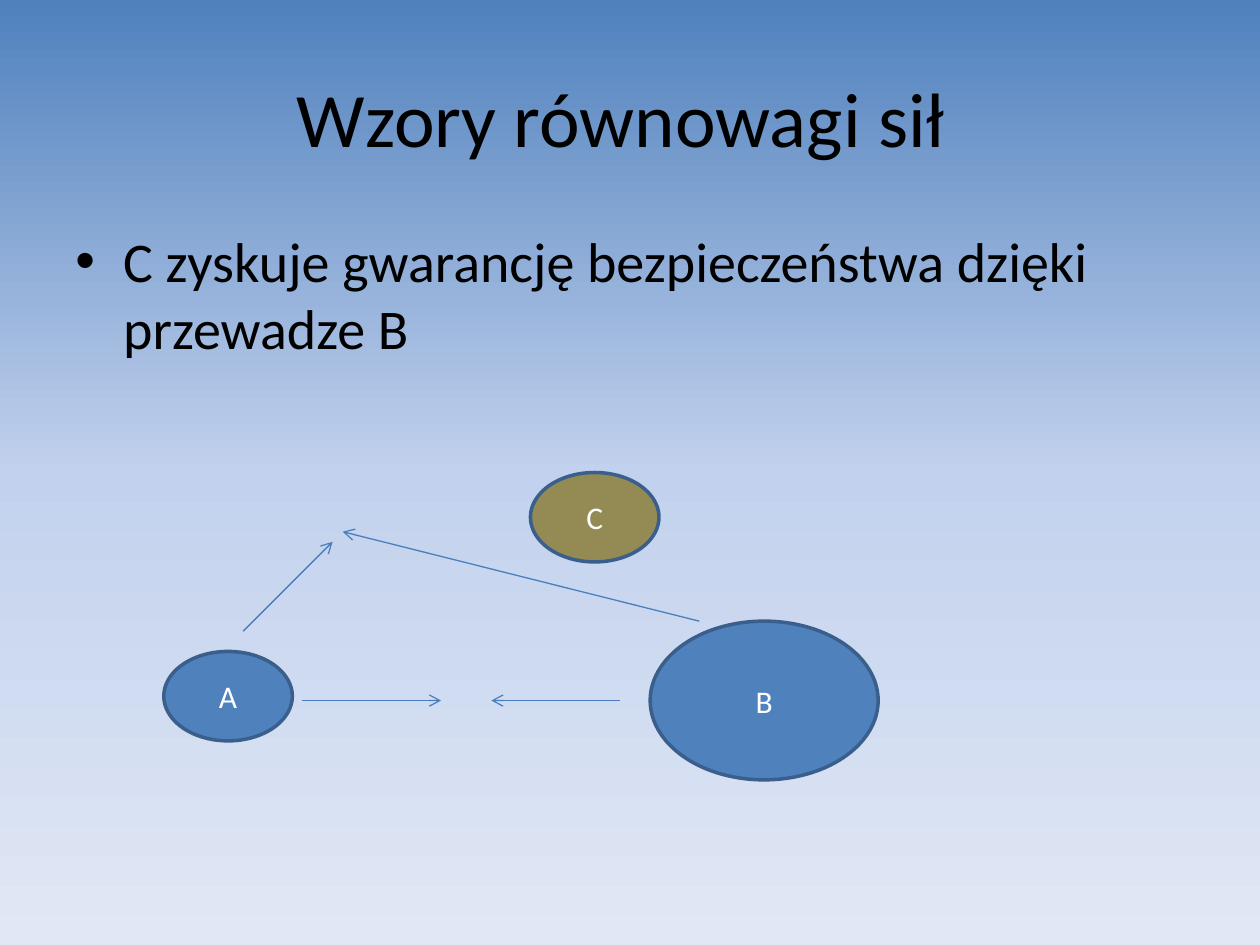
"""Builds a slide on patterns in the balance of power."""
from copy import deepcopy
from dataclasses import dataclass

from pptx import Presentation
from pptx.dml.color import RGBColor
from pptx.enum.shapes import MSO_CONNECTOR, MSO_SHAPE
from pptx.enum.text import MSO_ANCHOR, PP_ALIGN
from pptx.oxml.ns import qn
from pptx.util import Inches, Pt
from lxml.etree import SubElement


@dataclass(frozen=True)
class Theme:
    font: str = "Calibri"
    ink: str = "000000"
    white: str = "FFFFFF"
    blue: str = "4F81BD"
    olive: str = "948A54"
    edge: str = "3A5F8C"
    arrow: str = "4B7EBC"
    back: tuple = ((0, "4F81BD"), (0.5, "C2D1ED"), (1, "E1E8F5"))
    head: int = 44
    body: int = 32
    label: int = 18
    rim: float = 2
    thin: float = 0.75


class Page:
    cols, rows = 100, 75

    def __init__(self, deck, theme):
        self.theme = theme
        self.wide, self.high = deck.slide_width, deck.slide_height
        self.slide = deck.slides.add_slide(deck.slide_layouts[5])

    def x(self, col):
        return round(self.wide * col / self.cols)

    def y(self, row):
        return round(self.high * row / self.rows)

    def box(self, left, top, width, height):
        return self.x(left), self.y(top), self.x(width), self.y(height)

    def words(self, frame, text, size, color, align, anchor):
        frame.word_wrap = True
        frame.vertical_anchor = anchor
        para = frame.paragraphs[0]
        para.text = text
        para.alignment = align
        para.font.name = self.theme.font
        para.font.size = Pt(size)
        para.font.color.rgb = RGBColor.from_string(color)
        return para

    def back(self):
        fill = self.slide.background.fill
        fill.gradient()
        fill.gradient_angle = 270
        stops = self.slide.element.xpath(".//a:gsLst")[0]
        stops.append(deepcopy(stops[-1]))
        for stop, (place, color) in zip(fill.gradient_stops, self.theme.back):
            stop.position = place
            stop.color.rgb = RGBColor.from_string(color)

    def title(self, text, *area):
        shape = self.slide.shapes.title
        shape.left, shape.top, shape.width, shape.height = self.box(*area)
        self.words(shape.text_frame, text, self.theme.head, self.theme.ink,
                   PP_ALIGN.CENTER, MSO_ANCHOR.MIDDLE)

    def bullet(self, text, *area):
        shape = self.slide.shapes.add_textbox(*self.box(*area))
        para = self.words(shape.text_frame, text, self.theme.body,
                          self.theme.ink, PP_ALIGN.LEFT, MSO_ANCHOR.TOP)
        para.space_before = Pt(self.theme.body * 0.2)
        props = para._p.get_or_add_pPr()
        indent = Inches(0.38)
        props.set("marL", str(indent))
        props.set("indent", str(-indent))
        SubElement(props, qn("a:buFont"), typeface="Arial")
        SubElement(props, qn("a:buChar"), char="•")
        props.append(props.find(qn("a:defRPr")))

    def state(self, name, color, *area):
        shape = self.slide.shapes.add_shape(MSO_SHAPE.OVAL, *self.box(*area))
        shape.shadow.inherit = False
        shape.fill.solid()
        shape.fill.fore_color.rgb = RGBColor.from_string(color)
        shape.line.color.rgb = RGBColor.from_string(self.theme.edge)
        shape.line.width = Pt(self.theme.rim)
        self.words(shape.text_frame, name, self.theme.label, self.theme.white,
                   PP_ALIGN.CENTER, MSO_ANCHOR.MIDDLE)

    def arrow(self, start, end):
        line = self.slide.shapes.add_connector(
            MSO_CONNECTOR.STRAIGHT, self.x(start[0]), self.y(start[1]),
            self.x(end[0]), self.y(end[1]))
        line.line.color.rgb = RGBColor.from_string(self.theme.arrow)
        line.line.width = Pt(self.theme.thin)
        props = line.element.spPr
        SubElement(props.find(qn("a:ln")), qn("a:tailEnd"), type="arrow")
        SubElement(props, qn("a:effectLst"))


def main():
    deck = Presentation()
    deck.slide_width, deck.slide_height = Inches(10), Inches(7.5)
    theme = Theme()
    page = Page(deck, theme)
    page.back()
    page.title("Wzory równowagi sił ", 5, 3, 90, 12.5)
    page.bullet("C zyskuje gwarancję bezpieczeństwa dzięki przewadze B",
                5, 17.5, 90, 49.5)
    small = 10.2, 7.1
    page.state("A", theme.blue, 13, 51.7, *small)
    page.state("B", theme.blue, 51.6, 49.3, 18.1, 12.6)
    page.arrow((24, 55.6), (35, 55.6))
    page.arrow((49.2, 55.6), (39, 55.6))
    page.arrow((19.3, 50.1), (26.4, 43))
    page.state("C", theme.olive, 42.1, 37.5, *small)
    page.arrow((55.5, 49.3), (27.2, 42.2))
    deck.save("out.pptx")


if __name__ == "__main__":
    main()
